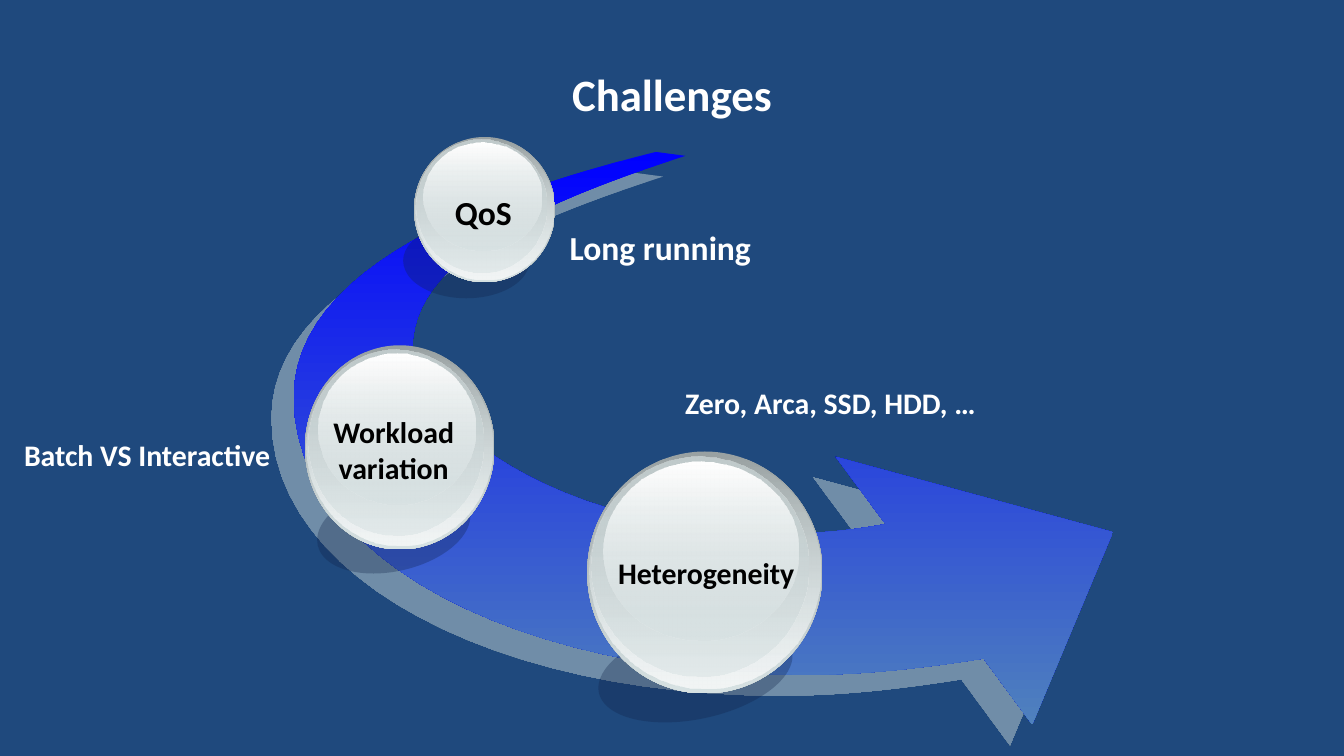
import lxml.etree
import pptx
import pptx.dml.color
import pptx.enum.shapes
import pptx.enum.text
import pptx.oxml.ns
import pptx.util

THEME = {
    "font": "Calibri",
    "background": "1F497D",
    "light": "FFFFFF",
    "dark": "000000",
    "title_size": 24,
    "large": 18,
    "small": 16,
    "arrow": (("0000FF", 100), ("4F81BD", 100)),
    "arrow_shadow": ("C1D1D3", 50),
    "ball_shadow": ("0F2145", 30),
    "ball_rim": (("99A1A2", 100), ("D6E1E2", 100)),
    "ball_edge_light": (("D6E1E2", 0), ("F2F5F5", 100)),
    "ball_body": (("C1CBCC", 100), ("D6E1E2", 48)),
    "ball_gloss": (("FFFFFF", 100), ("D6E1E2", 38)),
}

TITLE = ("Challenges", (36, 16.5, 648, 67.7))

BALLS = [
    {"text": "Heterogeneity", "size": "small", "box": (314.6, 241.9, 126, 129.6),
     "text_box": (323.3, 293.8, 110.2, 26.6),
     "shadow_box": (319.7, 334.8, 105.8, 50.4), "rotation": 347.9},
    {"text": "Workload\nvariation", "size": "small", "box": (163.4, 185, 101.5, 109.4),
     "text_box": (169.2, 218.2, 83.5, 46.1),
     "shadow_box": (169.2, 259.9, 83.5, 46.1), "rotation": 347.1},
    {"text": "QoS", "size": "large", "box": (221.8, 73.4, 75.6, 77.8),
     "text_box": (236.2, 99.4, 45.4, 28.8),
     "shadow_box": (216, 119.5, 67.7, 40.3), "rotation": 0},
]

BALL_LAYERS = {
    "ball_rim": (0, 0, 1, 1),
    "ball_edge_light": (0.01, 0.01, 0.98, 0.97),
    "ball_body": (0.02, 0.02, 0.92, 0.91),
    "ball_gloss": (0.07, 0.04, 0.83, 0.74),
}

LABELS = [
    ("Long running", "large", (298.1, 118.1, 112.3, 28.8)),
    ("Batch VS Interactive", "small", (5.8, 230.4, 163.4, 26.6)),
    ("Zero, Arca, SSD, HDD, …", "small", (360, 202.3, 196.6, 26.6)),
]

OUTER_TAIL = (351.4, 81.4)
OUTER_LEFT = (157.4, 213)
OUTER_BOTTOM = (430, 361.6)
OUTER_NECK = (527, 352.8)
HEAD_CORNERS = [(553, 388.1), (596.2, 285.1), (447.8, 244.8)]
INNER_NECK = (474.5, 280.8)
INNER_BOTTOM = (422.6, 285.8)
INNER_LEFT = (221, 186.5)
INNER_TAIL = (367.2, 83.5)

OUTER_BENDS = [
    (OUTER_TAIL, (-91, 22.8), (0, -70), OUTER_LEFT),
    (OUTER_LEFT, (0, 86.4), (-151.5, 0), OUTER_BOTTOM),
    (OUTER_BOTTOM, (35, 0), (-30, 4.7), OUTER_NECK),
]
INNER_BENDS = [
    (INNER_NECK, (-17.5, 3.2), (17.4, 0), INNER_BOTTOM),
    (INNER_BOTTOM, (-128.5, 0), (0, 36.4), INNER_LEFT),
    (INNER_LEFT, (0, -45.4), (-85.3, 27.3), INNER_TAIL),
]
STEPS_PER_BEND = 24


def points(values):
    return [pptx.util.Pt(value) for value in values]


def rgb(value):
    return pptx.dml.color.RGBColor.from_string(value)


def add_child(parent, tag, **attributes):
    child = lxml.etree.SubElement(parent, pptx.oxml.ns.qn(tag))
    for name, value in attributes.items():
        child.set(name, str(value))
    return child


def set_opacity(color_element, percent):
    if percent < 100:
        add_child(color_element, "a:alpha", val=percent * 1000)


def color_elements(shape):
    return list(shape._element.spPr.iter(pptx.oxml.ns.qn("a:srgbClr")))


def fill_solid(shape, color, opacity):
    shape.fill.solid()
    shape.fill.fore_color.rgb = rgb(color)
    set_opacity(color_elements(shape)[0], opacity)


def fill_gradient(shape, stops):
    shape.fill.gradient()
    shape.fill.gradient_angle = 270
    for stop, (color, _) in zip(shape.fill.gradient_stops, stops):
        stop.color.rgb = rgb(color)
    for element, (_, opacity) in zip(color_elements(shape), stops):
        set_opacity(element, opacity)


def clear_outline(shape):
    shape.line.fill.background()
    shape.shadow.inherit = False


def add_ellipse(slide, box):
    shape = slide.shapes.add_shape(pptx.enum.shapes.MSO_SHAPE.OVAL, *points(box))
    clear_outline(shape)
    return shape


def write_text(frame, text, size, color, alignment):
    frame.text = text
    for paragraph in frame.paragraphs:
        paragraph.alignment = alignment
        paragraph.font.name = THEME["font"]
        paragraph.font.size = pptx.util.Pt(THEME[size])
        paragraph.font.bold = True
        paragraph.font.color.rgb = rgb(THEME[color])


def add_text(slide, text, size, box, color, alignment, wrap):
    frame = slide.shapes.add_textbox(*points(box)).text_frame
    frame.word_wrap = wrap
    frame.auto_size = pptx.enum.text.MSO_AUTO_SIZE.SHAPE_TO_FIT_TEXT
    write_text(frame, text, size, color, alignment)


def add_title(slide):
    text, box = TITLE
    title = slide.shapes.title
    title.left, title.top, title.width, title.height = points(box)
    title.text_frame.vertical_anchor = pptx.enum.text.MSO_ANCHOR.MIDDLE
    write_text(title.text_frame, text, "title_size", "light", pptx.enum.text.PP_ALIGN.CENTER)


def bezier_point(start, leaving, arriving, end, t):
    return tuple(
        (1 - t) ** 3 * a + 3 * (1 - t) ** 2 * t * (a + out)
        + 3 * (1 - t) * t ** 2 * (b + back) + t ** 3 * b
        for a, out, back, b in zip(start, leaving, arriving, end)
    )


def trace_edge(bends):
    edge = [bends[0][0]]
    for bend in bends:
        edge += [bezier_point(*bend, step / STEPS_PER_BEND)
                 for step in range(1, STEPS_PER_BEND + 1)]
    return edge


def add_arrow(slide):
    outline = trace_edge(OUTER_BENDS) + HEAD_CORNERS + trace_edge(INNER_BENDS)
    start, *rest = [points(vertex) for vertex in outline]
    builder = slide.shapes.build_freeform(*start)
    builder.add_line_segments(rest, close=True)
    arrow = builder.convert_to_shape()
    fill_gradient(arrow, THEME["arrow"])
    clear_outline(arrow)
    effects = arrow._element.spPr.find(pptx.oxml.ns.qn("a:effectLst"))
    shadow = add_child(effects, "a:outerShdw", blurRad=0, dist=pptx.util.Pt(16.3),
                       dir=137 * 60000, algn="ctr", rotWithShape=0)
    color, opacity = THEME["arrow_shadow"]
    set_opacity(add_child(shadow, "a:srgbClr", val=color), opacity)


def add_ball(slide, ball):
    shadow = add_ellipse(slide, ball["shadow_box"])
    shadow.rotation = ball["rotation"]
    fill_solid(shadow, *THEME["ball_shadow"])
    left, top, width, height = ball["box"]
    for layer_name, (x, y, across, down) in BALL_LAYERS.items():
        layer = add_ellipse(slide, (left + x * width, top + y * height,
                                    across * width, down * height))
        fill_gradient(layer, THEME[layer_name])
    add_text(slide, ball["text"], ball["size"], ball["text_box"], "dark",
             pptx.enum.text.PP_ALIGN.CENTER, False)


def main():
    presentation = pptx.Presentation()
    presentation.slide_width, presentation.slide_height = points((720, 405))
    slide = presentation.slides.add_slide(presentation.slide_layouts[5])
    slide.background.fill.solid()
    slide.background.fill.fore_color.rgb = rgb(THEME["background"])
    add_title(slide)
    add_arrow(slide)
    for ball in BALLS:
        add_ball(slide, ball)
    for text, size, box in LABELS:
        add_text(slide, text, size, box, "light", pptx.enum.text.PP_ALIGN.LEFT, True)
    presentation.save("out.pptx")


if __name__ == "__main__":
    main()
